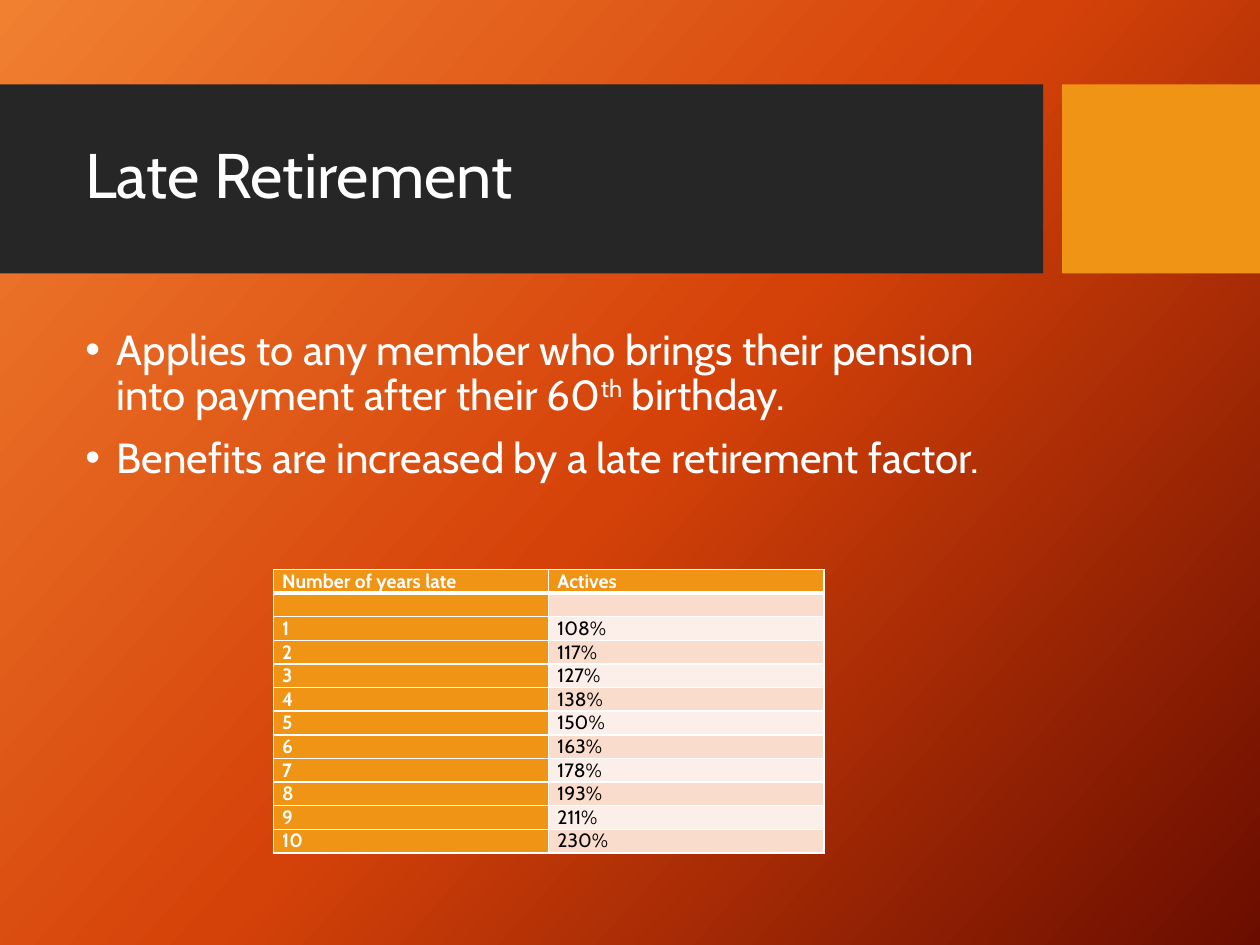
from lxml import etree
from pptx import Presentation
from pptx.dml.color import RGBColor
from pptx.enum.shapes import MSO_SHAPE
from pptx.enum.text import MSO_ANCHOR
from pptx.oxml.ns import qn
from pptx.util import Inches, Pt

RECTANGLE = MSO_SHAPE.RECTANGLE
MIDDLE = MSO_ANCHOR.MIDDLE

THEME = {
    "font": "Cabin", "title": 36, "body": 24, "table": 11,
    "white": "FFFFFF", "black": "000000", "band": "262626", "accent": "F09415",
    "rows": ("F9DCCC", "FCEEE8"),
    "background": ((0, "F18031"), (50, "D54209"), (100, "6A0D00")),
}
WIDTH, HEIGHT = 10, 7.5
LEFT = 0.58


def set_font(paragraph, size, color, bold=False):
    font = paragraph.font
    font.name, font.size, font.bold = THEME["font"], Pt(size), bold
    font.color.rgb = RGBColor.from_string(color)


def add_solid(parent, color):
    fill = etree.SubElement(parent, qn("a:solidFill"))
    etree.SubElement(fill, qn("a:srgbClr"), val=color)


deck = Presentation()
deck.slide_width, deck.slide_height = Inches(WIDTH), Inches(HEIGHT)
slide = deck.slides.add_slide(deck.slide_layouts[6])

# Background: three-stop diagonal gradient
background = slide.background.fill
background.gradient()
background.gradient_angle = 360 - 42
stops = slide.element.find(".//" + qn("a:gsLst"))
for stop in list(stops):
    stops.remove(stop)
for percent, color in THEME["background"]:
    stop = etree.SubElement(stops, qn("a:gs"), pos=str(percent * 1000))
    etree.SubElement(stop, qn("a:srgbClr"), val=color)

# Title band and accent block
for left, right, color in ((0, 8.28, "band"), (8.43, WIDTH, "accent")):
    block = slide.shapes.add_shape(RECTANGLE, Inches(left), Inches(0.67),
                                   Inches(right - left), Inches(HEIGHT / 5))
    block.shadow.inherit = False
    block.fill.solid()
    block.fill.fore_color.rgb = RGBColor.from_string(THEME[color])
    block.line.fill.background()

# Title
title = slide.shapes.add_textbox(Inches(LEFT), Inches(0.82), Inches(7.54), Inches(1.18)).text_frame
title.word_wrap = True
title.vertical_anchor = MIDDLE
heading = title.paragraphs[0]
heading.text = "Late Retirement"
heading.line_spacing = 0.9
set_font(heading, THEME["title"], THEME["white"])

# Bullets: each is a list of (text, is superscript)
bullets = (
    (("Applies to any member who brings their pension into payment after their 60", False),
     ("th", True), (" birthday.", False)),
    (("Benefits are increased by a late retirement factor.", False),),
)
body = slide.shapes.add_textbox(Inches(LEFT), Inches(2.56), Inches(7.53), Inches(3.94)).text_frame
body.word_wrap = True
for index, pieces in enumerate(bullets):
    point = body.add_paragraph() if index else body.paragraphs[0]
    properties = point._p.get_or_add_pPr()
    properties.set("marL", str(Inches(0.25)))
    properties.set("indent", str(-Inches(0.25)))
    etree.SubElement(properties, qn("a:buFont"), typeface="Arial")
    etree.SubElement(properties, qn("a:buChar"), char="•")
    point.line_spacing = 0.9
    point.space_before = Pt(10 if index else 0)
    set_font(point, THEME["body"], THEME["white"])
    for text, superscript in pieces:
        run = point.add_run()
        run.text = text
        if superscript:
            run.font._element.set("baseline", "30000")

# Table of late retirement factors
factors = (108, 117, 127, 138, 150, 163, 178, 193, 211, 230)
records = [("Number of years late", "Actives"), ("", "")]
records += [(str(year), f"{factor}%") for year, factor in enumerate(factors, 1)]
table = slide.shapes.add_table(len(records), 2, Inches(2.17), Inches(4.52),
                               Inches(4.37), Inches(2.25)).table
for row, record in enumerate(records):
    for column, text in enumerate(record):
        cell = table.cell(row, column)
        cell.margin_left = cell.margin_right = Inches(0.07)
        cell.margin_top = cell.margin_bottom = 0
        strong = row == 0 or column == 0
        entry = cell.text_frame.paragraphs[0]
        set_font(entry, THEME["table"], THEME["white" if strong else "black"], strong)
        if text:
            entry.add_run().text = text
        else:
            etree.SubElement(entry._p, qn("a:endParaRPr"), sz=str(THEME["table"] * 100))

        # Borders come before the fill; the header rule is thicker
        cell_properties = cell._tc.get_or_add_tcPr()
        for side in "LRTB":
            heavy = (row, side) in ((0, "B"), (1, "T"))
            border = etree.SubElement(cell_properties, qn("a:ln" + side),
                                      w=str(Pt(3 if heavy else 1)))
            add_solid(border, THEME["white"])
        cell.fill.solid()
        shade = THEME["accent"] if strong else THEME["rows"][(row - 1) % 2]
        cell.fill.fore_color.rgb = RGBColor.from_string(shade)

deck.save("out.pptx")
